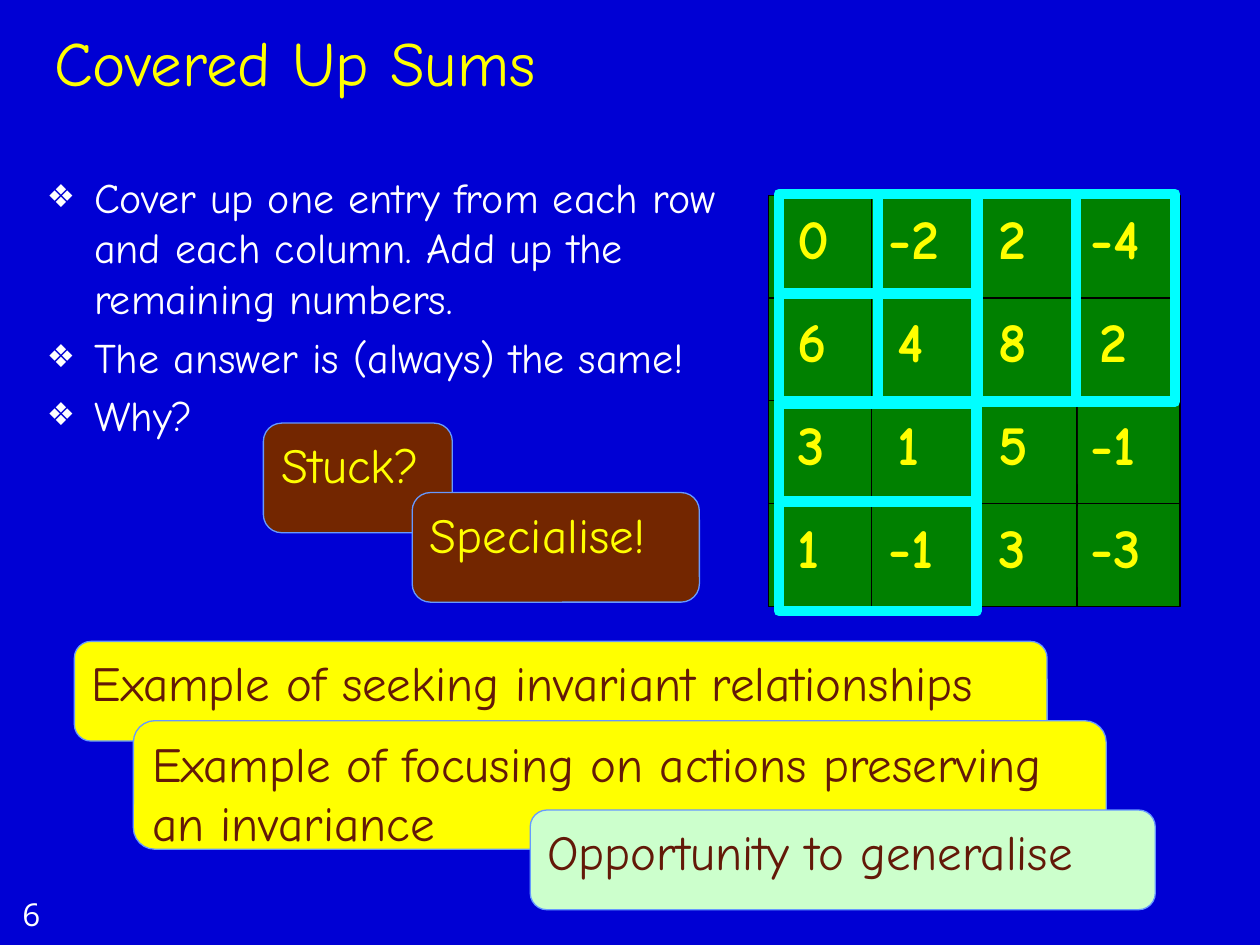
from dataclasses import dataclass

from lxml import etree
from pptx import Presentation
from pptx.dml.color import RGBColor
from pptx.enum import shapes, text
from pptx.oxml import ns
from pptx.util import Cm, Pt

FONT = "Comic Neue"
BLUE, YELLOW, WHITE, GREEN = "0000D4", "FFFF00", "FFFFFF", "008000"
CYAN, BROWN, MAROON, MINT, EDGE = "00FFFF", "732600", "631908", "CCFFCC", "6699FF"

ROW_PARTS = (0, 6, 3, 1)
COLUMN_PARTS = (0, -2, 2, -4)
DIGIT_WIDTH = {"1": 0.99}
NEGATIVE_WIDTH = {"-1": 1.57, "-3": 1.73, "-4": 1.8}

BULLETS = (
    "Cover up one entry from each row and each column. Add up the remaining numbers.",
    "The answer is (always) the same!",
    "Why?",
)


@dataclass(frozen=True)
class Box:
    """A rectangle in centimetres."""
    left: float
    top: float
    width: float
    height: float

    def lengths(self) -> tuple:
        return Cm(self.left), Cm(self.top), Cm(self.width), Cm(self.height)


@dataclass(frozen=True)
class Card:
    wording: str
    box: Box
    fill: str
    ink: str


CARDS = (
    Card("Example of seeking invariant relationships",
         Box(1.5, 12.93, 19.61, 2.01), YELLOW, MAROON),
    Card("Example of focusing on actions preserving an invariance",
         Box(2.69, 14.53, 19.61, 2.59), YELLOW, MAROON),
    Card("Opportunity to generalise", Box(10.69, 16.33, 12.6, 2.01), MINT, MAROON),
    Card("Stuck?", Box(5.31, 8.53, 3.81, 2.21), BROWN, YELLOW),
    Card("Specialise!", Box(8.31, 9.93, 5.79, 2.21), BROWN, YELLOW),
)

FRAME_CORNERS = ((15.6, 4.01), (15.6, 6.02), (15.6, 8.23), (17.6, 4.01), (19.6, 4.01))


def color(code: str) -> RGBColor:
    return RGBColor.from_string(code)


def style(para, size: float, ink: str, name: str = FONT) -> None:
    para.alignment = text.PP_ALIGN.LEFT
    para.font.name = name
    para.font.size = Pt(size)
    para.font.color.rgb = color(ink)


def add_box(page, kind, box: Box, fill: str = "", line: str = "", weight: float = 0.75):
    """Add a shape; an empty fill or line colour means none."""
    shape = page.shapes.add_shape(kind, *box.lengths())
    shape.shadow.inherit = False
    if fill:
        shape.fill.solid()
        shape.fill.fore_color.rgb = color(fill)
    else:
        shape.fill.background()
    if line:
        shape.line.color.rgb = color(line)
        shape.line.width = Pt(weight)
    else:
        shape.line.fill.background()
    return shape


def add_number(page, row: int, column: int) -> None:
    value = ROW_PARTS[row] + COLUMN_PARTS[column]
    label = str(value)
    if value < 0:
        shift, width = -0.18, NEGATIVE_WIDTH.get(label, 1.75)
    else:
        shift, width = 0, DIGIT_WIDTH.get(label, 1.22)
    box = Box(15.82 + 2.03 * column + shift, 3.97 + 2.08 * row, width, 1.63)
    frame = add_box(page, shapes.MSO_SHAPE.RECTANGLE, box, GREEN).text_frame
    frame.word_wrap = False
    frame.auto_size = text.MSO_AUTO_SIZE.SHAPE_TO_FIT_TEXT
    frame.vertical_anchor = text.MSO_ANCHOR.TOP
    para = frame.paragraphs[0]
    para.text = label
    style(para, 32, YELLOW)
    para.font.bold = True
    para.space_before = para.space_after = Pt(2)


def add_grid(page) -> None:
    places = [(row, column) for row in range(4) for column in range(4)]
    for row, column in places:
        box = Box(15.5 + 2.07 * column, 3.94 + 2.07 * row, 2.08, 2.08)
        add_box(page, shapes.MSO_SHAPE.RECTANGLE, box, GREEN, "000000")
    for row, column in places:
        add_number(page, row, column)
    for left, top in FRAME_CORNERS:
        frame = add_box(page, shapes.MSO_SHAPE.RECTANGLE,
                        Box(left, top, 4.19, 3.99), line=CYAN, weight=6)
        frame.rotation = 90


def add_card(page, card: Card) -> None:
    shape = add_box(page, shapes.MSO_SHAPE.ROUNDED_RECTANGLE, card.box, card.fill, EDGE)
    frame = shape.text_frame
    frame.word_wrap = True
    frame.vertical_anchor = text.MSO_ANCHOR.TOP
    frame.text = card.wording
    style(frame.paragraphs[0], 28, card.ink)


def place(holder, box: Box):
    holder.left, holder.top, holder.width, holder.height = box.lengths()
    holder.text_frame.auto_size = text.MSO_AUTO_SIZE.NONE
    return holder.text_frame


def add_bullet(para) -> None:
    bullet_color = etree.Element(ns.qn("a:buClr"))
    etree.SubElement(bullet_color, ns.qn("a:srgbClr"), val=WHITE)
    size = etree.Element(ns.qn("a:buSzPct"), val="75000")
    mark = etree.Element(ns.qn("a:buChar"), char="❖")
    properties = para._p.get_or_add_pPr()
    for index, part in enumerate((bullet_color, size, mark)):
        properties.insert(index, part)


def main() -> None:
    deck = Presentation()
    deck.slide_width, deck.slide_height = Cm(25.4), Cm(19.05)
    page = deck.slides.add_slide(deck.slide_layouts[1])
    page.background.fill.solid()
    page.background.fill.fore_color.rgb = color(BLUE)

    number = page.shapes.add_textbox(*Box(0.2, 17.91, 1.9, 1.02).lengths()).text_frame
    number.word_wrap = True
    number.text = "6"
    style(number.paragraphs[0], 18, WHITE, "Open Sans")

    title = place(page.shapes.title, Box(0.84, 0.43, 21.59, 1.7))
    title.vertical_anchor = text.MSO_ANCHOR.BOTTOM
    title.text = "Covered Up Sums"
    style(title.paragraphs[0], 36, YELLOW)

    body = place(page.placeholders[1], Box(0.69, 3.33, 14.6, 6.6))
    body.text = "\n".join(BULLETS)
    for para in body.paragraphs:
        style(para, 24, WHITE)
        add_bullet(para)

    add_grid(page)
    for card in CARDS:
        add_card(page, card)
    deck.save("out.pptx")


if __name__ == "__main__":
    main()
